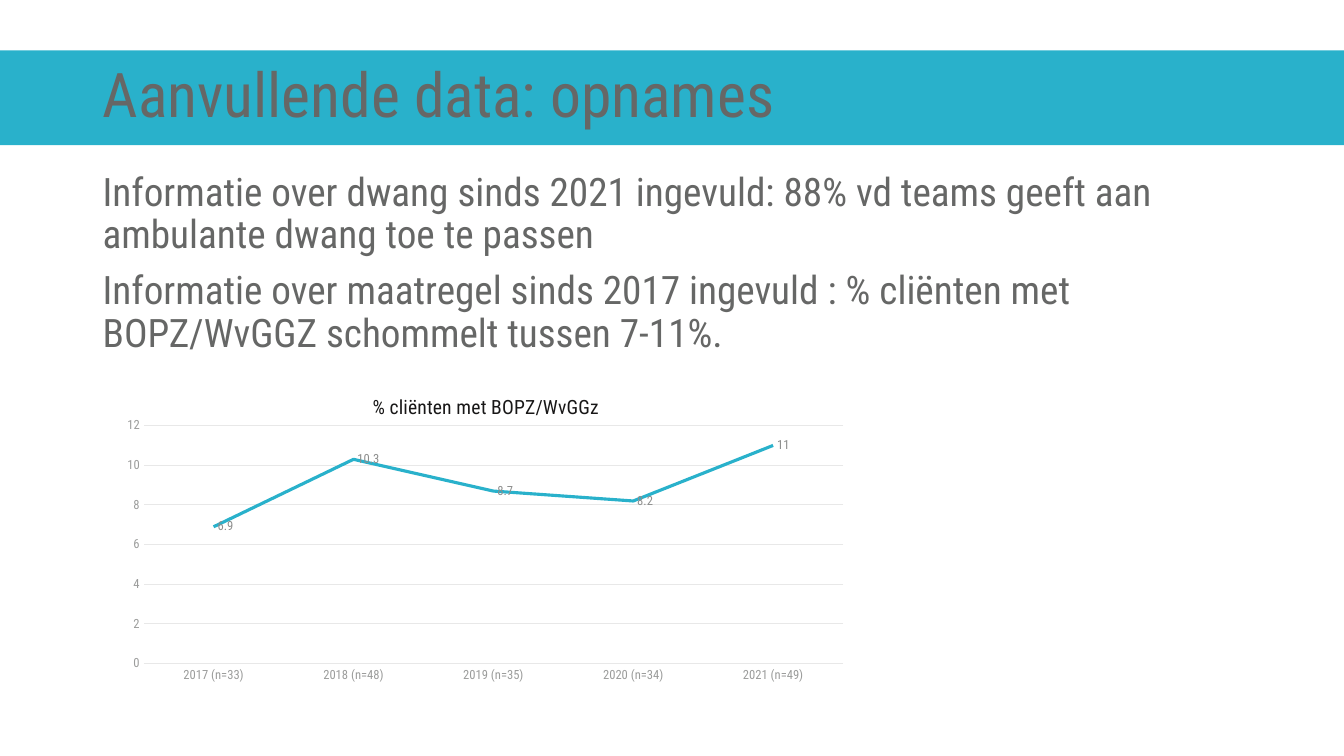
from lxml.etree import SubElement
from pptx import Presentation
from pptx.chart.data import CategoryChartData
from pptx.dml.color import RGBColor
from pptx.enum.chart import XL_CHART_TYPE, XL_LABEL_POSITION, XL_MARKER_STYLE, XL_TICK_MARK
from pptx.enum.shapes import MSO_SHAPE
from pptx.enum.text import MSO_ANCHOR, MSO_AUTO_SIZE, PP_ALIGN
from pptx.oxml.ns import qn
from pptx.util import Inches, Pt

FACE = "Roboto Condensed"
TEAL, GREY, PALE = "29B1CB", "666766", "E8E8E8"


def style(font, size, color):
    font.name, font.size, font.bold = FACE, Pt(size), False
    font.color.rgb = RGBColor.from_string(color)


def write(frame, *lines, size=28, color=GREY, gap=0, space=0.9, anchor=None):
    frame.word_wrap = True
    if anchor is not None:
        frame.auto_size = MSO_AUTO_SIZE.NONE
        frame.vertical_anchor = anchor
    for i, line in enumerate(lines):
        para = frame.add_paragraph() if i else frame.paragraphs[0]
        para.line_spacing = space
        para.space_before = Pt(gap if i else 0)
        run = para.add_run()
        run.text = line
        style(run.font, size, color)
    return frame


deck = Presentation()
deck.slide_width, deck.slide_height = Inches(13.33), Inches(7.5)
slide = deck.slides.add_slide(deck.slide_layouts[5])
wide = deck.slide_width
left, top, high = Inches(0.92), Inches(0.5), Inches(0.94)

band = slide.shapes.add_shape(MSO_SHAPE.RECTANGLE, 0, top, wide, high)
band.shadow.inherit = False
band.fill.solid()
band.fill.fore_color.rgb = RGBColor.from_string(TEAL)
band.line.fill.background()
slide.shapes._spTree.insert(2, band._element)

title = slide.shapes.title
title.left, title.top, title.width, title.height = left, top, wide - left, high
write(title.text_frame, "Aanvullende data: opnames", size=44, anchor=MSO_ANCHOR.MIDDLE)
title.text_frame.paragraphs[0].alignment = PP_ALIGN.LEFT

body = slide.shapes.add_textbox(left, Inches(1.66), Inches(11.5), Inches(4.02))
write(
    body.text_frame,
    "Informatie over dwang sinds 2021 ingevuld: 88% vd teams geeft aan ambulante dwang toe te passen",
    "Informatie over maatregel sinds 2017 ingevuld : % cliënten met BOPZ/WvGGZ schommelt tussen 7-11%.",
    gap=10, anchor=MSO_ANCHOR.TOP,
)

data = CategoryChartData()
data.categories = ["2017 (n=33)", "2018 (n=48)", "2019 (n=35)", "2020 (n=34)", "2021 (n=49)"]
data.add_series("Series 1", [6.9, 10.3, 8.7, 8.2, 11])
chart = slide.shapes.add_chart(
    XL_CHART_TYPE.LINE, Inches(1.13), Inches(3.75), Inches(7.38), Inches(3.15), data
).chart
style(chart.font, 10, GREY)
chart.has_legend = False
chart.has_title = True
write(chart.chart_title.text_frame, "% cliënten met BOPZ/WvGGz", size=14, color="181717", space=1)
chart.chart_title.include_in_layout = False

years, scale = chart.category_axis, chart.value_axis
for axis in (years, scale):
    axis.major_tick_mark = axis.minor_tick_mark = XL_TICK_MARK.NONE
    style(axis.tick_labels.font, 9, "9B9C9B")
scale.minimum_scale, scale.maximum_scale, scale.major_unit = 0, 12, 2
scale.has_major_gridlines = True
scale.format.line.fill.background()
for line in (years.format.line, scale.major_gridlines.format.line):
    line.color.rgb = RGBColor.from_string(PALE)
    line.width = Pt(0.75)

plot = chart.plots[0]
plot.vary_by_categories = False
trend = plot.series[0]
trend.smooth = False
trend.marker.style = XL_MARKER_STYLE.NONE
trend.format.line.color.rgb = RGBColor.from_string(TEAL)
trend.format.line.width = Pt(2.25)
marks = trend.data_labels
marks.show_value = True
marks.position = XL_LABEL_POSITION.RIGHT
style(marks.font, 9, "8C8D8C")

area = chart._chartSpace.chart.plotArea
for old in area.findall(qn("c:layout")):
    area.remove(old)
frame = SubElement(area, qn("c:layout"))
area.insert(0, frame)
inner = SubElement(frame, qn("c:manualLayout"))
for tag, val in (
    ("layoutTarget", "inner"), ("xMode", "edge"), ("yMode", "edge"),
    ("x", "0.04"), ("y", "0.15"), ("w", "0.94"), ("h", "0.75"),
):
    SubElement(inner, qn(f"c:{tag}")).set("val", val)

deck.save("out.pptx")
